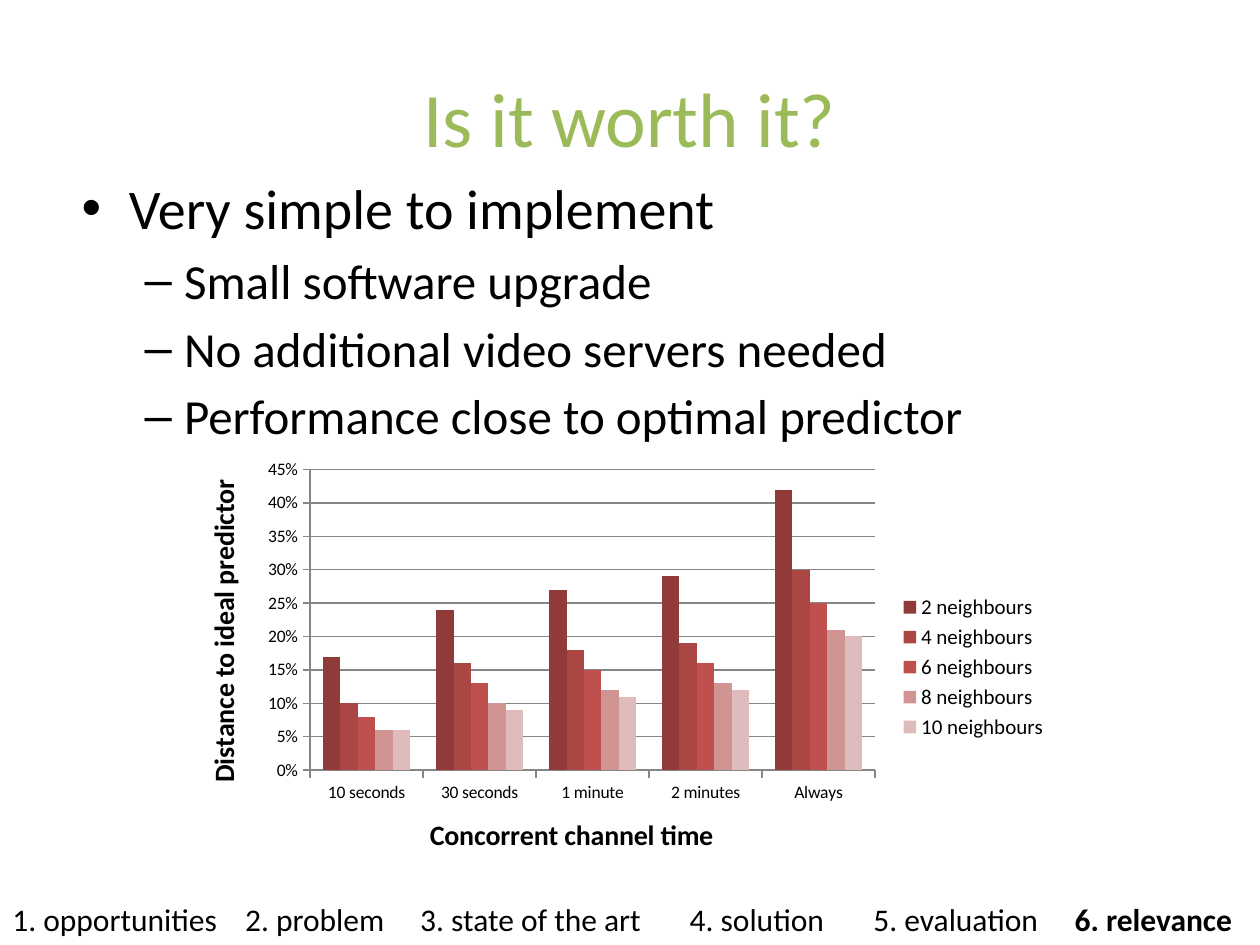
from dataclasses import dataclass
from typing import NamedTuple

from lxml.etree import SubElement
from pptx import Presentation
from pptx.chart.data import CategoryChartData as ChartData
from pptx.dml.color import RGBColor as Color
from pptx.enum.chart import XL_CHART_TYPE as ChartType
from pptx.enum.chart import XL_LEGEND_POSITION as LegendSide
from pptx.enum.chart import XL_TICK_MARK as TickMark
from pptx.enum.text import MSO_ANCHOR as Anchor
from pptx.enum.text import PP_ALIGN as Align
from pptx.oxml.ns import qn
from pptx.util import Pt


@dataclass(frozen=True)
class Theme:
    font: str = "Calibri"
    text: str = "000000"
    accent: str = "9BBB59"
    grid: str = "868686"
    title: int = 44
    bullet: int = 32
    sub_bullet: int = 28
    footer: int = 18
    axis_title: int = 16
    legend: int = 12
    tick: int = 10


class Area(NamedTuple):
    left: float
    top: float
    width: float
    height: float


class Bullet(NamedTuple):
    mark: str
    size: int
    margin: float
    hanging: float
    before: float


class Series(NamedTuple):
    name: str
    color: str
    values: tuple[float, ...]


class Section(NamedTuple):
    label: str
    start: float


THEME = Theme()
MAIN = Bullet("•", THEME.bullet, 27, 27, 6.4)
SUB = Bullet("–", THEME.sub_bullet, 58.5, 22.5, 5.2)
POINTS = (
    (MAIN, "Very simple to implement"),
    (SUB, "Small software upgrade"),
    (SUB, "No additional video servers needed"),
    (SUB, "Performance close to optimal predictor"),
)
SECTIONS = (
    Section("1. opportunities", 0),
    Section("2. problem", 133),
    Section("3. state of the art", 233),
    Section("4. solution", 387),
    Section("5. evaluation", 492),
    Section("6. relevance", 607),
)
CATEGORIES = ("10 seconds", "30 seconds", "1 minute", "2 minutes", "Always")
SERIES = (
    Series("2 neighbours", "903B39", (0.17, 0.24, 0.27, 0.29, 0.42)),
    Series("4 neighbours", "AA4745", (0.10, 0.16, 0.18, 0.19, 0.30)),
    Series("6 neighbours", "C0504D", (0.08, 0.13, 0.15, 0.16, 0.25)),
    Series("8 neighbours", "D09493", (0.06, 0.10, 0.12, 0.13, 0.21)),
    Series("10 neighbours", "E0BBBB", (0.06, 0.09, 0.11, 0.12, 0.20)),
)
PLOT = {"x": 0.15, "y": 0.04, "w": 0.64, "h": 0.7}


def style(font, size: float, color: str = THEME.text, bold: bool = False) -> None:
    font.name = THEME.font
    font.size = Pt(size)
    font.bold = bold
    font.color.rgb = Color.from_string(color)


def write(para, text: str, *, size: float, color: str = THEME.text,
          bold: bool = False) -> None:
    span = para.add_run()
    span.text = text
    style(span.font, size, color, bold)


def add_frame(page, area: Area, anchor=Anchor.TOP):
    frame = page.shapes.add_textbox(*map(Pt, area)).text_frame
    frame.word_wrap = True
    frame.vertical_anchor = anchor
    return frame


def add_title(page, text: str, area: Area) -> None:
    para = add_frame(page, area, Anchor.MIDDLE).paragraphs[0]
    para.alignment = Align.CENTER
    write(para, text, size=THEME.title, color=THEME.accent)


def add_bullets(page, area: Area) -> None:
    frame = add_frame(page, area)
    for index, (bullet, text) in enumerate(POINTS):
        para = frame.add_paragraph() if index else frame.paragraphs[0]
        para.level = 0 if bullet is MAIN else 1
        para.space_before = Pt(bullet.before)
        props = para._p.get_or_add_pPr()
        props.set("marL", str(Pt(bullet.margin)))
        props.set("indent", str(-Pt(bullet.hanging)))
        SubElement(props, qn("a:buFont"), typeface="Arial")
        SubElement(props, qn("a:buChar"), char=bullet.mark)
        write(para, text, size=bullet.size)


def add_footer(page, area: Area) -> None:
    para = add_frame(page, area).paragraphs[0]
    stops = SubElement(para._p.get_or_add_pPr(), qn("a:tabLst"))
    for section in SECTIONS:
        if section.start:
            SubElement(stops, qn("a:tab"), pos=str(Pt(section.start)), algn="l")
    *others, current = SECTIONS
    write(para, "".join(f"{section.label}\t" for section in others), size=THEME.footer)
    write(para, current.label, size=THEME.footer, bold=True)


def style_axis(axis, title: str) -> None:
    para = axis.axis_title.text_frame.paragraphs[0]
    write(para, title, size=THEME.axis_title, bold=True)
    axis.major_tick_mark = TickMark.OUTSIDE
    axis.minor_tick_mark = TickMark.NONE
    axis.format.line.color.rgb = Color.from_string(THEME.grid)
    style(axis.tick_labels.font, THEME.tick)


def place_plot(chart) -> None:
    area = chart._chartSpace.chart.plotArea
    for old in area.findall(qn("c:layout")):
        area.remove(old)
    layout = SubElement(area, qn("c:layout"))
    area.insert(0, layout)
    manual = SubElement(layout, qn("c:manualLayout"))
    SubElement(manual, qn("c:layoutTarget"), val="inner")
    for side in "xy":
        SubElement(manual, qn(f"c:{side}Mode"), val="edge")
    for name, value in PLOT.items():
        SubElement(manual, qn(f"c:{name}"), val=str(value))


def add_predictor_chart(page, area: Area) -> None:
    data = ChartData(number_format="0%")
    data.categories = CATEGORIES
    for series in SERIES:
        data.add_series(series.name, series.values)
    chart = page.shapes.add_chart(
        ChartType.COLUMN_CLUSTERED, *map(Pt, area), data).chart
    style(chart.font, THEME.tick)
    chart.has_title = False
    chart.has_legend = True
    chart.legend.position = LegendSide.RIGHT
    chart.legend.include_in_layout = False
    style(chart.legend.font, THEME.legend)
    plot = chart.plots[0]
    plot.gap_width = 150
    plot.overlap = 0
    plot.vary_by_categories = False
    for bars, series in zip(plot.series, SERIES):
        bars.format.fill.solid()
        bars.format.fill.fore_color.rgb = Color.from_string(series.color)
    style_axis(chart.category_axis, "Concorrent channel time")
    values = chart.value_axis
    style_axis(values, "Distance to ideal predictor")
    values.minimum_scale, values.maximum_scale, values.major_unit = 0, 0.45, 0.05
    values.tick_labels.number_format = "0%"
    values.tick_labels.number_format_is_linked = False
    values.has_major_gridlines = True
    values.major_gridlines.format.line.color.rgb = Color.from_string(THEME.grid)
    place_plot(chart)


def main() -> None:
    deck = Presentation()
    deck.slide_width, deck.slide_height = Pt(720), Pt(540)
    page = deck.slides.add_slide(deck.slide_layouts[6])
    add_title(page, "Is it worth it?", Area(36, 21.6, 648, 90))
    add_footer(page, Area(0, 511, 720, 29))
    add_predictor_chart(page, Area(101.5, 258.5, 504.5, 245.5))
    add_bullets(page, Area(39.6, 95.8, 648, 194.4))
    deck.save("out.pptx")


if __name__ == "__main__":
    main()
